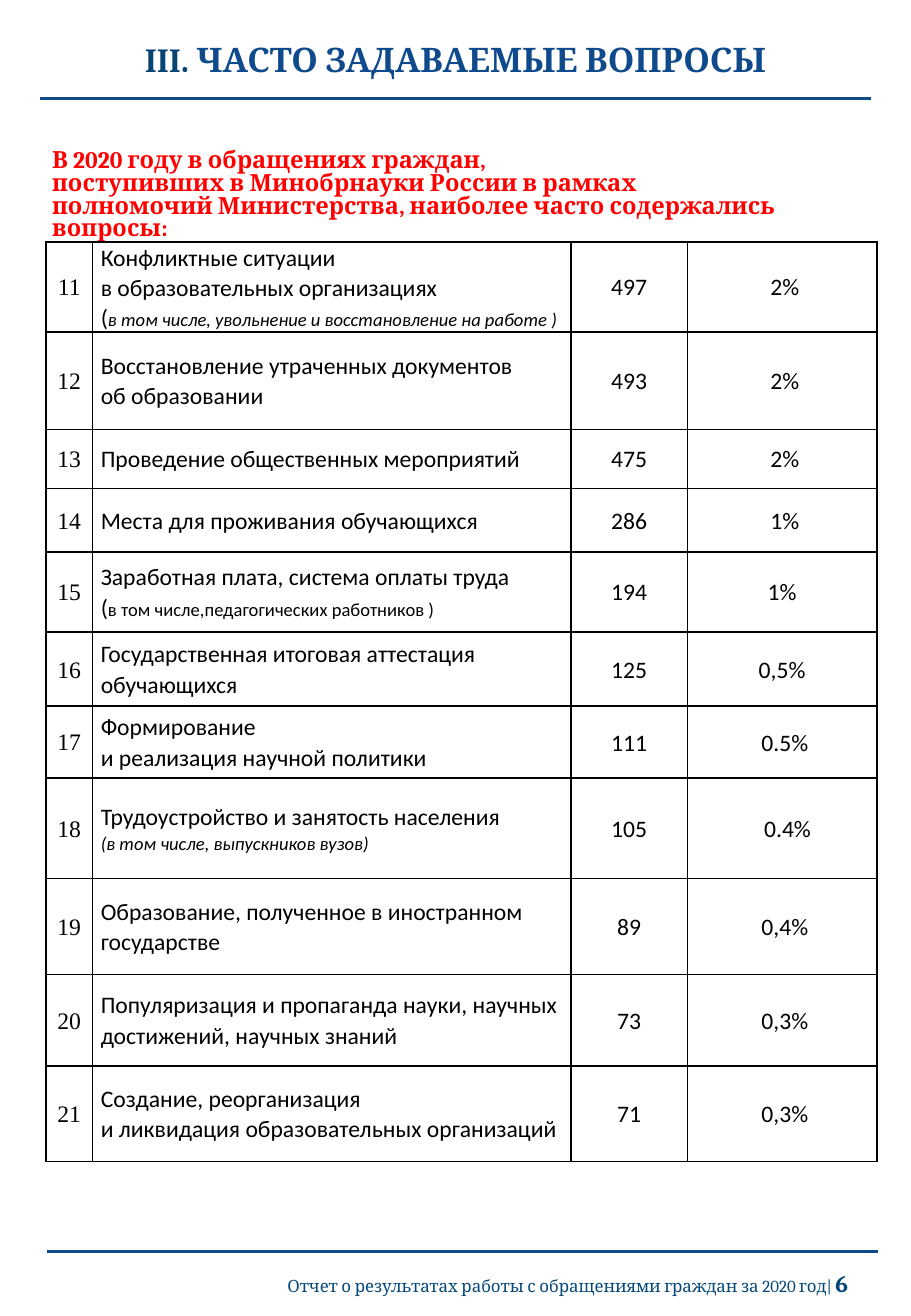
from lxml import etree
from pptx import Presentation
from pptx.dml.color import RGBColor
from pptx.enum import shapes, text
from pptx.oxml import ns
from pptx.util import Inches, Pt

BLUE = "0E4A8C"
FOOTER_BLUE = "064879"
BLACK = "000000"
LEFT, CENTER, RIGHT = text.PP_ALIGN.LEFT, text.PP_ALIGN.CENTER, text.PP_ALIGN.RIGHT
SMALL = {"size": 11}
SMALL_ITALIC = {"size": 11, "italic": True}
FIRST_NUMBER = 11
COLUMN_WIDTHS = [0.38, 3.94, 0.96, 1.56]

QUESTIONS = [
    (0.74, ["Конфликтные ситуации\nв образовательных организациях",
            ["(", ("в том числе, увольнение и восстановление на работе )", SMALL_ITALIC)]], "497", " 2%"),
    (0.8, ["Восстановление утраченных документов\nоб образовании"], "493", " 2%"),
    (0.49, ["Проведение общественных мероприятий"], "475", " 2%"),
    (0.52, ["Места для проживания обучающихся"], "286", " 1%"),
    (0.66, ["Заработная плата, система оплаты труда",
            ["(", ("в том числе,педагогических работников )", SMALL)]], "194", "1%"),
    (0.61, ["Государственная итоговая аттестация обучающихся"], "125", "0,5%"),
    (0.59, ["Формирование\nи реализация научной политики"], "111", " 0.5%"),
    (0.83, ["Трудоустройство и занятость населения",
            [("(в том числе, выпускников вузов)", SMALL_ITALIC)]], "105", "  0.4%"),
    (0.79, ["Образование, полученное в иностранном государстве"], "89", " 0,4%"),
    (0.75, ["Популяризация и пропаганда науки, научных достижений, научных знаний"], "73", " 0,3%"),
    (0.79, ["Создание, реорганизация\nи ликвидация образовательных организаций"], "71", " 0,3%"),
]


def rgb(value):
    return RGBColor.from_string(value)


def style_run(run, size, font, color, bold=False, italic=False):
    run.font.size = Pt(size)
    run.font.name = font
    run.font.color.rgb = rgb(color)
    run.font.bold = bold
    run.font.italic = italic


def write(frame, paragraphs, align=LEFT, spacing=1.0, **style):
    for index, pieces in enumerate(paragraphs):
        paragraph = frame.add_paragraph() if index else frame.paragraphs[0]
        paragraph.alignment = align
        paragraph.line_spacing = spacing
        for piece in [pieces] if isinstance(pieces, str) else pieces:
            words, changes = (piece, {}) if isinstance(piece, str) else piece
            for line_index, line in enumerate(words.split("\n")):
                if line_index:
                    paragraph.add_line_break()
                run = paragraph.add_run()
                run.text = line
                style_run(run, **{**style, **changes})


def add_text(slide, left, top, width, height, paragraphs, anchor=text.MSO_ANCHOR.TOP, **style):
    frame = slide.shapes.add_textbox(Inches(left), Inches(top), Inches(width), Inches(height)).text_frame
    frame.word_wrap = True
    frame.vertical_anchor = anchor
    write(frame, paragraphs, **style)


def add_rule(slide, left, right, y):
    rule = slide.shapes.add_connector(
        shapes.MSO_CONNECTOR.STRAIGHT, Inches(left), Inches(y), Inches(right), Inches(y))
    rule.line.color.rgb = rgb(BLUE)
    rule.line.width = Pt(1.5)
    etree.SubElement(rule._element.spPr, ns.qn("a:effectLst"))


def add_borders(cell, color, width):
    properties = cell._tc.get_or_add_tcPr()
    for index, side in enumerate(["lnL", "lnR", "lnT", "lnB"]):
        border = etree.Element(ns.qn(f"a:{side}"), w=str(Pt(width)))
        fill = etree.SubElement(border, ns.qn("a:solidFill"))
        etree.SubElement(fill, ns.qn("a:srgbClr"), val=color)
        properties.insert(index, border)


def fill_cell(cell, paragraphs, **style):
    cell.fill.background()
    cell.vertical_anchor = text.MSO_ANCHOR.MIDDLE
    cell.margin_left = cell.margin_right = Inches(0.07)
    cell.margin_top = cell.margin_bottom = 0
    add_borders(cell, BLACK, 1)
    write(cell.text_frame, paragraphs, size=14, color=BLACK, **style)


def add_questions(slide, left, top):
    heights = [question[0] for question in QUESTIONS]
    table = slide.shapes.add_table(
        len(QUESTIONS), len(COLUMN_WIDTHS), Inches(left), Inches(top),
        Inches(sum(COLUMN_WIDTHS)), Inches(sum(heights))).table
    table.first_row = table.horz_banding = False
    for column, width in zip(table.columns, COLUMN_WIDTHS):
        column.width = Inches(width)
    for index, (height, topic, count, share) in enumerate(QUESTIONS):
        row = table.rows[index]
        row.height = Inches(height)
        number_cell, topic_cell, count_cell, share_cell = row.cells
        fill_cell(number_cell, [str(FIRST_NUMBER + index)], align=CENTER, spacing=1.07, font="Times New Roman")
        fill_cell(topic_cell, topic, spacing=1.06, font="Calibri")
        fill_cell(count_cell, [count], align=CENTER, spacing=1.06, font="Calibri")
        fill_cell(share_cell, [share], align=CENTER, spacing=1.06, font="Calibri")


def main():
    report = Presentation()
    report.slide_width, report.slide_height = Inches(7.5), Inches(10.83)
    slide = report.slides.add_slide(report.slide_layouts[6])
    add_text(slide, 0, 0.18, 7.5, 0.66, [[("III. ", {"color": "064473"}), "ЧАСТО ЗАДАВАЕМЫЕ ВОПРОСЫ"]],
             anchor=text.MSO_ANCHOR.MIDDLE, align=CENTER, spacing=0.9,
             size=20, font="Cambria", color=BLUE, bold=True)
    add_rule(slide, 0.33, 7.17, 0.81)
    add_text(slide, 0.33, 1.19, 6.38, 0.67,
             ["В 2020 году в обращениях граждан,",
              "поступивших в Минобрнауки России в рамках полномочий Министерства, "
              "наиболее часто содержались вопросы:"],
             spacing=0.8, size=14, font="Cambria", color="FF0000", bold=True)
    add_questions(slide, 0.38, 1.99)
    add_rule(slide, 0.39, 7.23, 10.3)
    add_text(slide, 1.59, 10.44, 5.49, 0.29,
             [["Отчет о результатах работы с обращениями граждан за 2020 год| ", ("6", {"size": 14, "bold": True})]],
             align=RIGHT, spacing=0.8, size=10, font="Cambria", color=FOOTER_BLUE)
    report.save("out.pptx")


if __name__ == "__main__":
    main()
